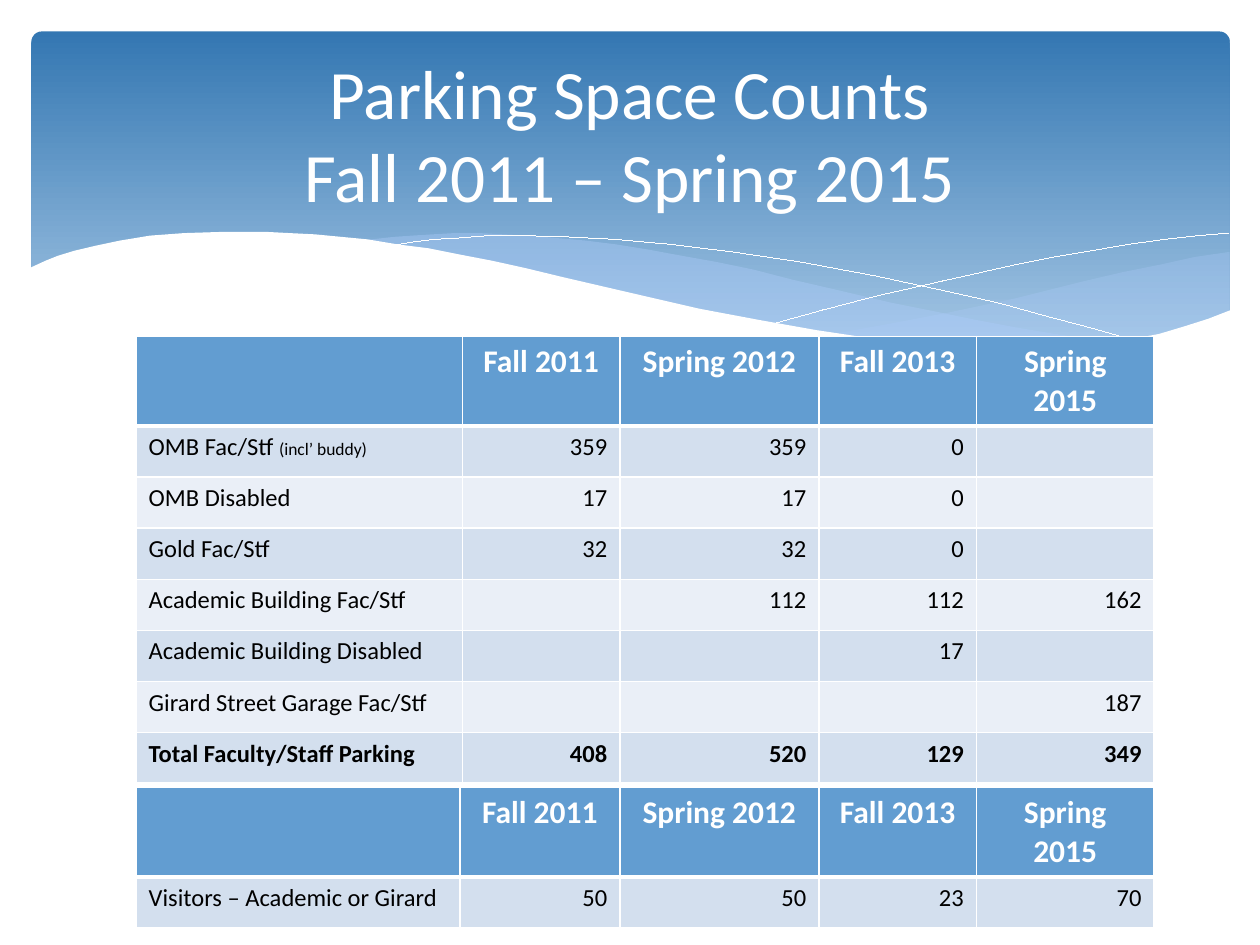
import pptx
import pptx.util
import pptx.dml.color
import pptx.enum.shapes
import pptx.enum.text
import pptx.oxml
import pptx.oxml.ns
import lxml.etree

PX = 9144
ROW_HEIGHT = 40
FONT = "Calibri"
WHITE, BLACK, HEADER, BANDS = "FFFFFF", "000000", "629DD1", ("D3DFEE", "EAEFF7")
ALIGN = pptx.enum.text.PP_ALIGN

TITLE = ["Parking Space Counts", "Fall 2011 – Spring 2015"]
HEADINGS = ["", "Fall 2011", "Spring 2012", "Fall 2013", "Spring 2015"]
NOTES = {"OMB Fac/Stf ": "(incl’ buddy)"}
TOTAL = "Total Faculty/Staff Parking"
STAFF_ROWS = [
    ["OMB Fac/Stf ", "359", "359", "0", ""],
    ["OMB Disabled", "17", "17", "0", ""],
    ["Gold Fac/Stf", "32", "32", "0", ""],
    ["Academic Building Fac/Stf", "", "112", "112", "162"],
    ["Academic Building Disabled", "", "", "17", ""],
    ["Girard Street Garage Fac/Stf", "", "", "", "187"],
    [TOTAL, "408", "520", "129", "349"],
]
VISITOR_ROWS = [["Visitors – Academic or Girard", "50", "50", "23", "70"]]
TABLES = [
    (267, [259, 125, 158, 125, 141], STAFF_ROWS),
    (625, [257, 127, 158, 125, 141], VISITOR_ROWS),
]

RIGHT_WAVE = [
    (975, 200), (948, 204), (921, 210), (891, 216), (861, 223), (805, 237), (753, 248),
    (706, 257), (661, 265), (691, 269), (719, 272), (745, 275), (769, 277), (803, 278),
    (835, 277), (863, 275), (889, 272), (913, 267), (935, 262), (949, 257), (963, 252),
    (976, 247), (976, 200),
]
MIDDLE_WAVE = [
    (893, 273), (866, 269), (837, 265), (807, 260), (775, 254), (741, 247), (706, 240),
    (668, 231), (629, 222), (598, 214), (569, 208), (541, 203), (514, 198), (489, 194),
    (465, 191), (442, 189), (420, 187), (399, 186), (380, 185), (361, 185), (344, 186),
    (328, 187), (313, 188), (286, 191), (323, 196), (362, 203), (404, 211), (449, 222),
    (491, 232), (530, 240), (566, 248), (601, 255), (634, 261), (665, 266), (695, 270),
    (722, 274), (748, 276), (773, 277), (796, 278), (838, 278), (867, 276),
]
FALLING_LINE = [
    (309, 195), (328, 192), (344, 190), (363, 189), (387, 187), (416, 187), (450, 188),
    (489, 190), (533, 194), (582, 200), (636, 208), (695, 219), (760, 233), (795, 241),
    (831, 251), (869, 261), (907, 272),
]
RISING_LINE = [
    (613, 257), (653, 246), (695, 235), (748, 223), (806, 210), (836, 204), (866, 199),
    (895, 194), (924, 190), (951, 187), (975, 185),
]
WHITE_WAVE = [
    (977, 246), (959, 253), (940, 259), (920, 265), (899, 269), (875, 273), (850, 275),
    (823, 277), (793, 276), (761, 275), (726, 272), (688, 268), (648, 262), (603, 254),
    (555, 245), (503, 233), (447, 220), (418, 213), (391, 207), (365, 202), (340, 197),
    (316, 194), (292, 190), (271, 188), (250, 186), (230, 185), (211, 184), (177, 184),
    (146, 185), (119, 187), (95, 191), (76, 195), (59, 199), (46, 203), (36, 207),
    (23, 213), (23, 329), (977, 329),
]
WAVES = [
    (RIGHT_WAVE, "ACCBF9", 29),
    (MIDDLE_WAVE, "ACCBF9", 40),
    (FALLING_LINE, None, 100),
    (RISING_LINE, None, 100),
    (WHITE_WAVE, WHITE, 100),
]


def px(*values):
    return [value * PX for value in values]


def colour(value):
    return pptx.dml.color.RGBColor.from_string(value)


def write(para, text, size=14, color=BLACK, bold=False, align=ALIGN.LEFT):
    para.alignment = align
    span = para.add_run()
    span.text = text
    span.font.size = pptx.util.Pt(size)
    span.font.name = FONT
    span.font.bold = bold
    span.font.color.rgb = colour(color)


def add_banner(page):
    banner = page.shapes.add_shape(
        pptx.enum.shapes.MSO_SHAPE.ROUNDED_RECTANGLE, *px(25, 25, 951, 270))
    banner.adjustments[0] = 0.03
    banner.shadow.inherit = False
    banner.line.fill.background()
    banner.fill.gradient()
    banner.fill.gradient_angle = 270
    for stop, value, position in zip(
            banner.fill.gradient_stops, ("3477B2", "A1C4E3"), (0, 0.9)):
        stop.color.rgb = colour(value)
        stop.position = position


def add_wave(page, points, fill, opacity):
    builder = page.shapes.build_freeform(*points[0], scale=PX)
    builder.add_line_segments(points[1:], close=fill is not None)
    wave = builder.convert_to_shape()
    wave.shadow.inherit = False
    if fill is None:
        wave.fill.background()
        wave.line.color.rgb = colour(WHITE)
        wave.line.width = 1
        return
    wave.line.fill.background()
    wave.fill.solid()
    wave.fill.fore_color.rgb = colour(fill)
    if opacity < 100:
        tint = wave.fill._xPr.find(".//" + pptx.oxml.ns.qn("a:srgbClr"))
        lxml.etree.SubElement(
            tint, pptx.oxml.ns.qn("a:alpha"), val=str(opacity * 1000))


def set_borders(cell, top, bottom):
    properties = cell._tc.get_or_add_tcPr()
    for index, (side, width) in enumerate(
            (("L", 1), ("R", 1), ("T", top), ("B", bottom))):
        properties.insert(index, pptx.oxml.parse_xml(
            f'<a:ln{side} {pptx.oxml.ns.nsdecls("a")} w="{pptx.util.Pt(width)}">'
            f'<a:solidFill><a:srgbClr val="{WHITE}"/></a:solidFill></a:ln{side}>'))


def add_counts(page, top, widths, rows):
    content = [HEADINGS] + rows
    frame = page.shapes.add_table(
        len(content), len(widths), *px(108, top, sum(widths), ROW_HEIGHT * len(content)))
    table = frame.table
    for column, width in zip(table.columns, widths):
        column.width = width * PX
    for r, row in enumerate(content):
        table.rows[r].height = ROW_HEIGHT * PX
        for c, text in enumerate(row):
            cell = table.cell(r, c)
            cell.fill.solid()
            cell.fill.fore_color.rgb = colour(BANDS[(r - 1) % 2] if r else HEADER)
            set_borders(cell, 3 if r == 1 else 1, 1 if r else 3)
            para = cell.text_frame.paragraphs[0]
            if text and r == 0:
                write(para, text, size=18, color=WHITE, bold=True, align=ALIGN.CENTER)
            elif text:
                write(para, text, bold=row[0] == TOTAL,
                      align=ALIGN.RIGHT if c else ALIGN.LEFT)
            if text in NOTES:
                write(para, NOTES[text], size=10)


def add_title(page):
    title = page.shapes.title
    title.left, title.top, title.width, title.height = px(50, 37, 900, 137)
    page.shapes._spTree.append(title._element)
    frame = title.text_frame
    frame.auto_size = pptx.enum.text.MSO_AUTO_SIZE.NONE
    frame.vertical_anchor = pptx.enum.text.MSO_ANCHOR.MIDDLE
    para = frame.paragraphs[0]
    for number, line in enumerate(TITLE):
        if number:
            para.add_line_break()
        write(para, line, size=39.6, color=WHITE, align=ALIGN.CENTER)


def main():
    deck = pptx.Presentation()
    deck.slide_width, deck.slide_height = px(1000, 750)
    page = deck.slides.add_slide(deck.slide_layouts[5])
    add_banner(page)
    for wave in WAVES:
        add_wave(page, *wave)
    add_title(page)
    for counts in TABLES:
        add_counts(page, *counts)
    deck.save("out.pptx")


if __name__ == "__main__":
    main()
